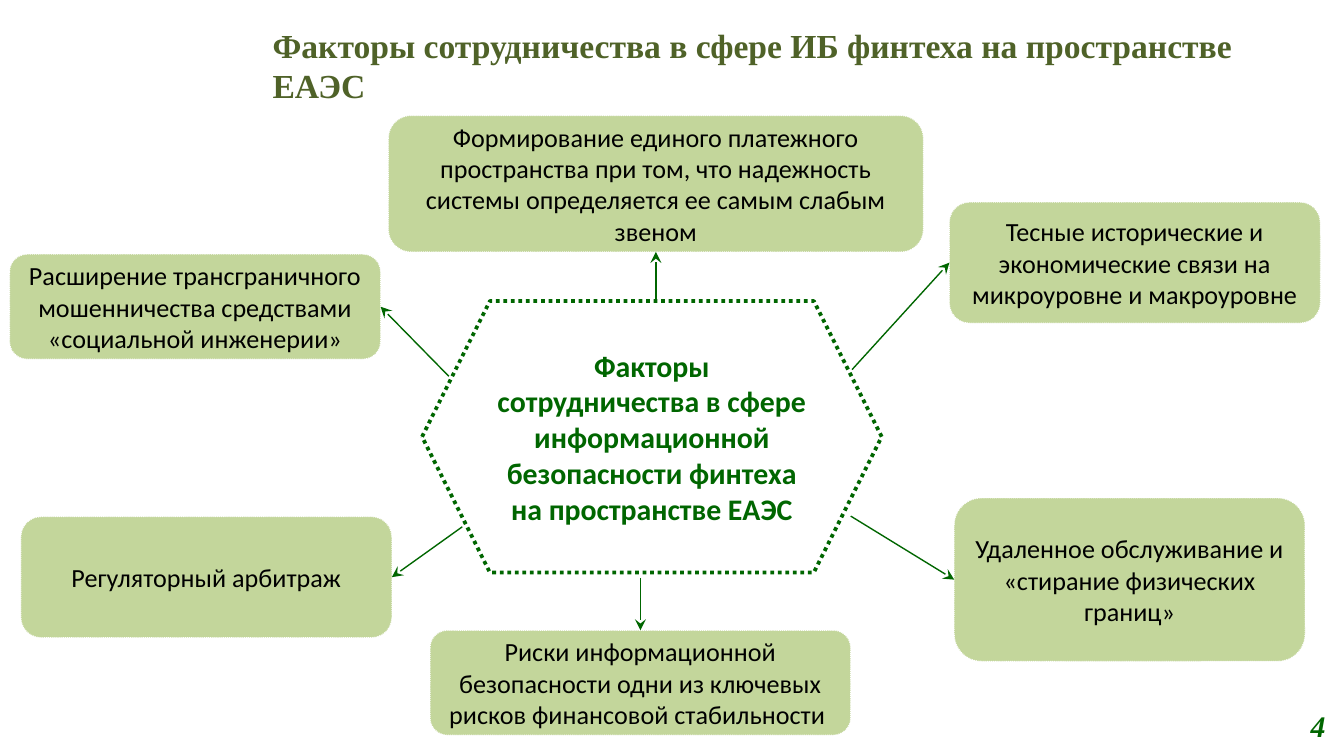
"""Build the slide on cooperation factors in fintech information security."""
from lxml import etree
from pptx import Presentation
from pptx import util as u
from pptx.dml.color import RGBColor
from pptx.enum import dml, shapes, text
from pptx.oxml.ns import qn

OLIVE = RGBColor(0x4F, 0x62, 0x28)
GREEN = RGBColor(0x00, 0x66, 0x00)
LIME = RGBColor(0xC3, 0xD6, 0x9B)
WHITE = RGBColor(0xFF, 0xFF, 0xFF)
BLACK = RGBColor(0x00, 0x00, 0x00)
WIDE = 10
HIGH = WIDE * 9 / 16
FORM = shapes.MSO_SHAPE
ALIGN = text.PP_ALIGN
MID, TOP = text.MSO_ANCHOR.MIDDLE, text.MSO_ANCHOR.TOP

TITLE = ("Факторы сотрудничества в сфере ИБ финтеха на пространстве ЕАЭС",
         (19.3, 2.45, 76.4, 9.42))
PAGE = ("4", (95.7, 93.33, 3.9, 5.16))
CORE = ("Факторы сотрудничества в сфере информационной безопасности "
        "финтеха на пространстве ЕАЭС", (31.4, 39.82, 34.2, 35.91))
FACTORS = [
    ("Формирование единого платежного пространства при том, что надежность "
     "системы определяется ее самым слабым звеном",
     (28.9, 15.29, 39.8, 18.04), "bottom", (48.8, 39.82)),
    ("Тесные исторические и экономические связи на микроуровне и макроуровне",
     (70.64, 26.75, 27.6, 16), "left", (63.4, 48.89)),
    ("Удаленное обслуживание и «стирание физических границ»",
     (71, 65.88, 26.1, 21.6), "left", (63.3, 68.27)),
    ("Риски информационной безопасности одни из ключевых рисков финансовой "
     "стабильности ", (32, 83.38, 31.3, 13.87), "top", (47.65, 76.44)),
    ("Регуляторный арбитраж",
     (1.56, 68.35, 27.6, 16), "right", (34.4, 69.69)),
    ("Расширение трансграничного мошенничества средствами "
     "«социальной инженерии»",
     (0.72, 33.64, 27.6, 13.87), "right", (33.4, 49.78)),
]
SIDES = {"top": (0.5, 0), "bottom": (0.5, 1), "left": (0, 0.5), "right": (1, 0.5)}
FONTS = {
    "title": dict(name="Times New Roman", size=u.Pt(18), bold=True, color=OLIVE),
    "page": dict(name="Times New Roman", size=u.Pt(16), bold=True, italic=True,
                 color=GREEN),
    "core": dict(name="Calibri", size=u.Pt(16), bold=True, color=GREEN),
    "factor": dict(name="Calibri", size=u.Pt(14), color=BLACK),
}
TIGHT = dict(margin_left=u.Inches(0.04), margin_right=u.Inches(0.04))


def place(*shares):
    """Turn percent shares of the slide into lengths."""
    return [u.Inches(share * (WIDE, HIGH)[i % 2] / 100)
            for i, share in enumerate(shares)]


def write(shape, words, look, align, anchor=MID, **frame):
    """Put formatted words into a shape."""
    body = shape.text_frame
    for key, val in dict(word_wrap=True, vertical_anchor=anchor, **frame).items():
        setattr(body, key, val)
    para = body.paragraphs[0]
    para.alignment = align
    run = para.add_run()
    run.text = words
    for key, val in FONTS[look].items():
        if key == "color":
            run.font.color.rgb = val
        else:
            setattr(run.font, key, val)


def label(slide, item, look, align, anchor):
    """Add a plain text box."""
    words, area = item
    write(slide.shapes.add_textbox(*place(*area)), words, look, align, anchor)


def block(slide, form, area, fill, edge, width):
    """Add a filled shape with a dotted edge."""
    shape = slide.shapes.add_shape(form, *place(*area))
    shape.shadow.inherit = False
    shape.fill.solid()
    shape.fill.fore_color.rgb = fill
    shape.line.color.rgb = edge
    shape.line.width = u.Pt(width)
    shape.line.dash_style = dml.MSO_LINE.ROUND_DOT
    return shape


def arrow(slide, start, area, side):
    """Draw an arrow from the core to the middle of a box side."""
    left, top, wide, high = area
    across, down = SIDES[side]
    end = left + across * wide, top + down * high
    line = slide.shapes.add_connector(shapes.MSO_CONNECTOR.STRAIGHT,
                                      *place(*start, *end))
    line.line.color.rgb = GREEN
    line.line.width = u.Pt(0.75)
    etree.SubElement(line.line._get_or_add_ln(), qn("a:tailEnd"), type="stealth")
    etree.SubElement(line._element.spPr, qn("a:effectLst"))


def main():
    """Build and save the deck."""
    deck = Presentation()
    deck.slide_width, deck.slide_height = u.Inches(WIDE), u.Inches(HIGH)
    slide = deck.slides.add_slide(deck.slide_layouts[6])
    label(slide, TITLE, "title", ALIGN.LEFT, TOP)
    label(slide, PAGE, "page", ALIGN.RIGHT, MID)
    words, area = CORE
    core = block(slide, FORM.HEXAGON, area, WHITE, GREEN, 2)
    write(core, words, "core", ALIGN.CENTER)
    for words, area, side, start in FACTORS:
        box = block(slide, FORM.ROUNDED_RECTANGLE, area, LIME, WHITE, 0.5)
        write(box, words, "factor", ALIGN.CENTER, **TIGHT)
        arrow(slide, start, area, side)
    deck.save("out.pptx")


if __name__ == "__main__":
    main()
